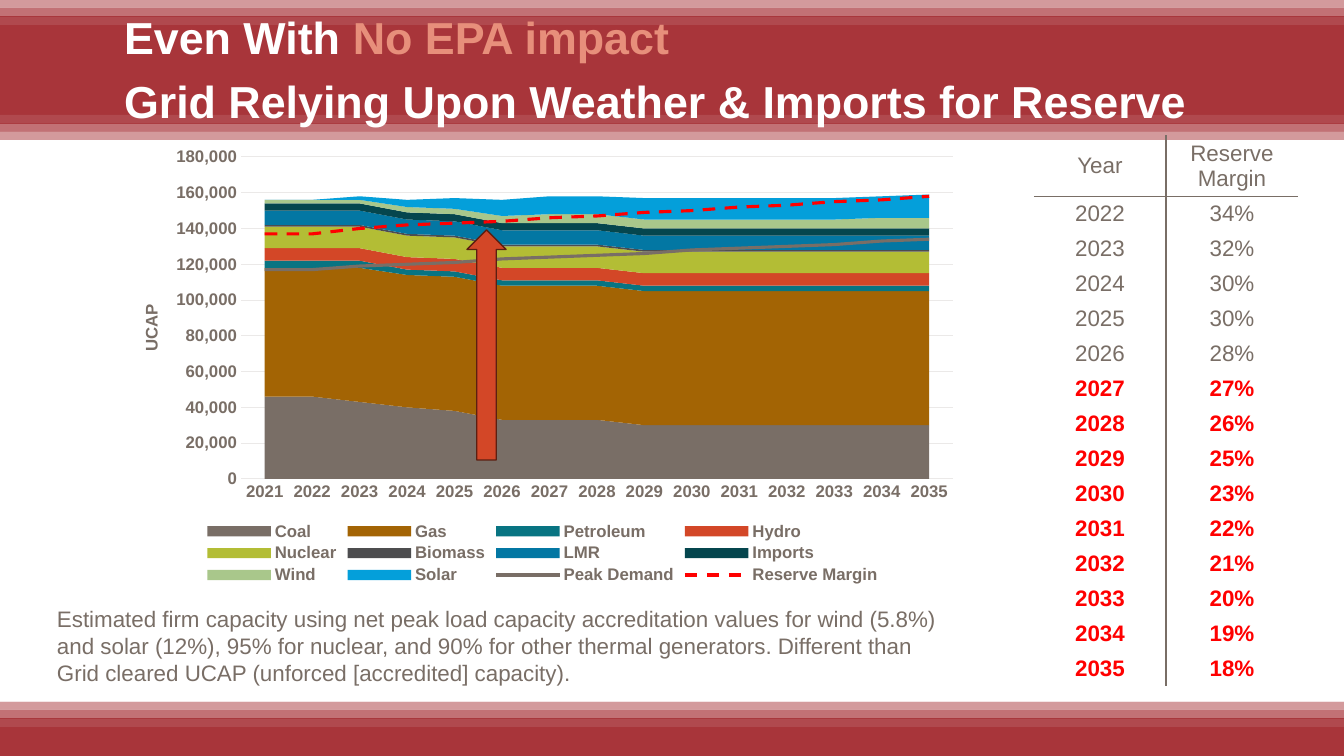
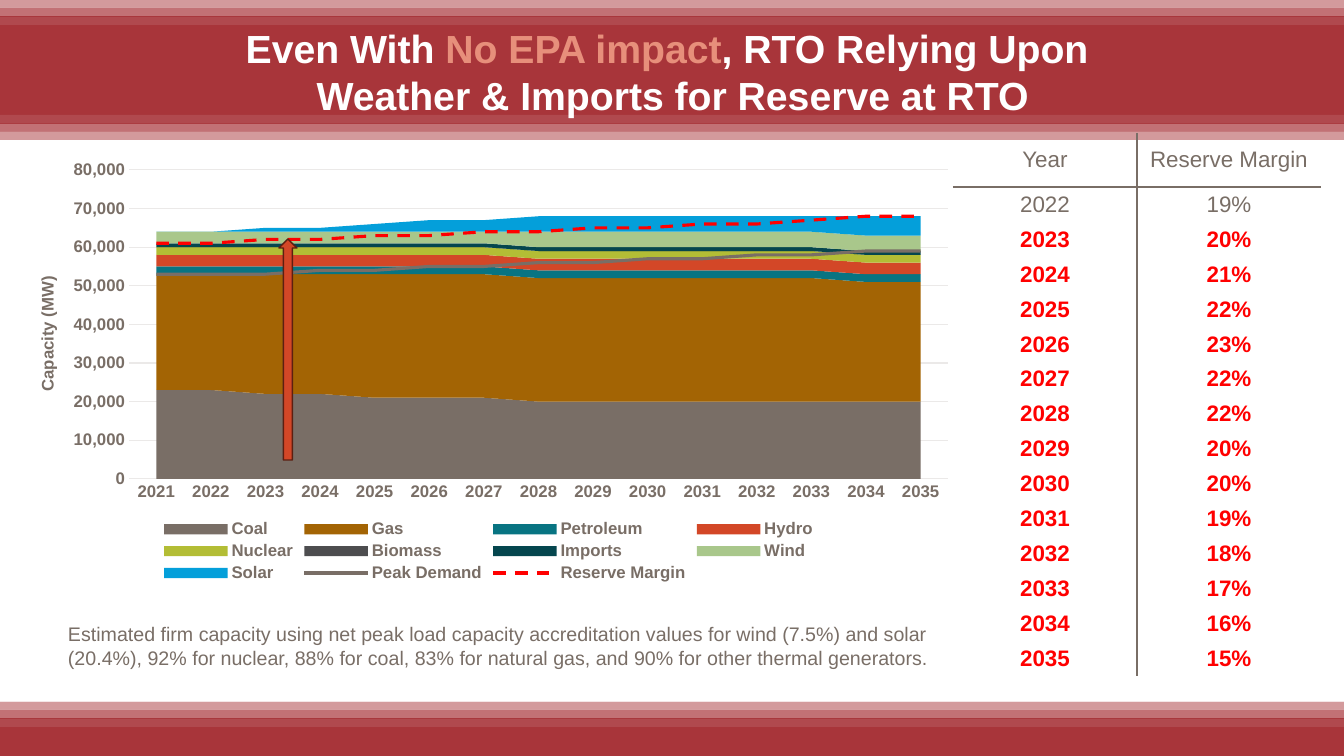
"""Build two slides on grid capacity outlook and reserve margins."""
import copy
import dataclasses
import typing

import pptx
import pptx.chart.chart
import pptx.chart.data
import pptx.dml.color
import pptx.enum.chart
import pptx.enum.dml
import pptx.enum.shapes
import pptx.enum.text
import pptx.oxml.ns
import pptx.oxml.xmlchemy
import pptx.slide
import pptx.table
import pptx.text.text
import pptx.util

EMU_PER_PX = 914400 / 100.8
SLIDE_W, SLIDE_H = 1344, 756
TITLE_X, TITLE_W, NOTE_W, ROW_H = 124, 1097, 889, 35
YEARS = range(2021, 2036)
ALIGN = pptx.enum.text.PP_ALIGN
qn = pptx.oxml.ns.qn
new_element = pptx.oxml.xmlchemy.OxmlElement


@dataclasses.dataclass(frozen=True)
class Theme:
    font: str = "Arial"
    band: str = "A8353A"
    white: str = "FFFFFF"
    accent: str = "E78F7B"
    body: str = "796E66"
    alert: str = "FF0000"
    grid: str = "EBE9E8"
    arrow: str = "D34727"
    arrow_edge: str = "5C1F11"
    chart_size: int = 12
    table_size: int = 16


THEME = Theme()
SERIES_COLORS = {
    "Coal": THEME.body, "Gas": "A36404", "Petroleum": "087482", "Hydro": THEME.arrow,
    "Nuclear": "B3BD35", "Biomass": "4D4D4F", "LMR": "0377A3", "Imports": "05464E",
    "Wind": "A9C78B", "Solar": "049FDA", "Peak Demand": THEME.body, "Reserve Margin": THEME.alert,
}


class Box(typing.NamedTuple):
    x: int
    y: int
    w: int = 0
    h: int = 0


class Run(typing.NamedTuple):
    text: str
    color: str = THEME.white


@dataclasses.dataclass(frozen=True)
class Title:
    y: int
    lines: list[list[Run]]
    size: int
    align: ALIGN
    spacing: float


@dataclasses.dataclass(frozen=True)
class CapacityChart:
    box: Box
    plot: Box
    axis_title: str
    axis_title_at: Box
    top: int
    step: int
    thousands: dict[str, list[int]]


@dataclasses.dataclass(frozen=True)
class MarginTable:
    x: int
    y: int
    column_w: int
    header_h: int
    margins: list[int]
    alert_from: int


@dataclasses.dataclass(frozen=True)
class Outlook:
    title: Title
    chart: CapacityChart
    table: MarginTable
    note_box: Box
    note: str
    note_size: int
    arrow: Box


def hold(*values: int) -> list[int]:
    """Extend yearly values with the last one up to the final year."""
    return [*values, *[values[-1]] * (len(YEARS) - len(values))]


def trend(base: int, start: float, growth: float) -> list[int]:
    """Return two flat years followed by steady growth."""
    return [base, base, *(round(start + growth * year) for year in range(len(YEARS) - 2))]


def px(length: float) -> int:
    """Convert px to EMU."""
    return round(length * EMU_PER_PX)


def emu(box: Box) -> list[int]:
    """Convert a box to EMU."""
    return [px(length) for length in box]


def rgb(color: str) -> pptx.dml.color.RGBColor:
    """Return a colour from its hex text."""
    return pptx.dml.color.RGBColor.from_string(color)


def style_font(font: pptx.text.text.Font, size: int, color: str, bold: bool = False) -> None:
    """Apply the theme typeface with a size, colour and weight."""
    font.name, font.size, font.bold = THEME.font, pptx.util.Pt(size), bold
    font.color.rgb = rgb(color)


def add_solid(slide: pptx.slide.Slide, preset: pptx.enum.shapes.MSO_SHAPE, box: Box, color: str):
    """Draw a filled preset shape without outline or shadow."""
    solid = slide.shapes.add_shape(preset, *emu(box))
    solid.shadow.inherit = False
    solid.fill.solid()
    solid.fill.fore_color.rgb = rgb(color)
    solid.line.fill.background()
    return solid


def add_bands(slide: pptx.slide.Slide, layout: pptx.slide.SlideLayout) -> None:
    """Draw the header and footer bands and place them on the shared layout."""
    rect = pptx.enum.shapes.MSO_SHAPE.RECTANGLE
    header, footer = Box(0, 0, SLIDE_W, 140), Box(0, 702, SLIDE_W, 54)
    bands = [add_solid(slide, rect, box, THEME.band) for box in (header, footer)]
    for start, direction in ((0, 1), (132, -1), (footer.y, 1)):
        for step, opacity in enumerate((50, 30, 10)):
            y = start + direction * round(8.4 * step)
            stripe = add_solid(slide, rect, Box(0, y, SLIDE_W, 8), THEME.white)
            color = stripe.element.spPr.find(qn("a:solidFill"))[0]
            alpha = new_element("a:alpha")
            alpha.set("val", str(opacity * 1000))
            color.append(alpha)
            bands.append(stripe)
    for band in bands:
        layout.shapes.element.append(band.element)


def add_text(slide: pptx.slide.Slide, box: Box, lines: list[list[Run]], size: int,
             bold: bool = False, align: ALIGN = ALIGN.LEFT, spacing: float = 1.0) -> None:
    """Write lines of runs in a wrapped box without insets."""
    frame = slide.shapes.add_textbox(*emu(box)).text_frame
    frame.word_wrap = True
    frame.margin_left = frame.margin_right = frame.margin_top = frame.margin_bottom = 0
    for index, line in enumerate(lines):
        paragraph = frame.add_paragraph() if index else frame.paragraphs[0]
        paragraph.alignment, paragraph.line_spacing = align, spacing
        paragraph.space_after = pptx.util.Pt(7)
        for part in line:
            run = paragraph.add_run()
            run.text = part.text
            style_font(run.font, size, part.color, bold)


def set_layout(owner, index: int, chart_box: Box, box: Box) -> None:
    """Fix the place, and the size if given, of a chart part in slide px."""
    old = owner.find(qn("c:layout"))
    if old is not None:
        owner.remove(old)
    layout, manual = new_element("c:layout"), new_element("c:manualLayout")
    layout.append(manual)
    settings = {"layoutTarget": "inner"} if box.w else {}
    settings |= {"xMode": "edge", "yMode": "edge",
                 "x": (box.x - chart_box.x) / chart_box.w, "y": (box.y - chart_box.y) / chart_box.h}
    if box.w:
        settings |= {"w": box.w / chart_box.w, "h": box.h / chart_box.h}
    for tag, value in settings.items():
        setting = new_element(f"c:{tag}")
        setting.set("val", str(value))
        manual.append(setting)
    owner.insert(index, layout)


def split_lines(chart: pptx.chart.chart.Chart, count: int) -> None:
    """Move the last series from the area plot to a line plot on the same axes."""
    chart.plots[0].vary_by_categories = False
    areas = chart.element.find(".//" + qn("c:areaChart"))
    lines, grouping = new_element("c:lineChart"), new_element("c:grouping")
    grouping.set("val", "standard")
    lines.append(grouping)
    for series in areas.findall(qn("c:ser"))[-count:]:
        lines.append(series)
    for axis_id in areas.findall(qn("c:axId")):
        lines.append(copy.deepcopy(axis_id))
    areas.addnext(lines)
    chart.plots[1].vary_by_categories = False


def add_capacity_chart(slide: pptx.slide.Slide, content: CapacityChart) -> None:
    """Draw stacked capacity with demand and reserve lines."""
    data = pptx.chart.data.CategoryChartData(number_format="#,##0")
    data.categories = [str(year) for year in YEARS]
    for name, values in content.thousands.items():
        data.add_series(name, [value * 1000 for value in values])
    kind = pptx.enum.chart.XL_CHART_TYPE.AREA_STACKED
    chart = slide.shapes.add_chart(kind, *emu(content.box), data).chart
    chart.has_title = False
    chart.has_legend = True
    chart.legend.position = pptx.enum.chart.XL_LEGEND_POSITION.BOTTOM
    chart.legend.include_in_layout = False
    split_lines(chart, 2)
    for series in chart.plots[0].series:
        series.format.fill.solid()
        series.format.fill.fore_color.rgb = rgb(SERIES_COLORS[series.name])
        series.format.line.fill.background()
    for series in chart.plots[1].series:
        series.smooth = False
        series.marker.style = pptx.enum.chart.XL_MARKER_STYLE.NONE
        series.format.line.width = pptx.util.Pt(2.25)
        series.format.line.color.rgb = rgb(SERIES_COLORS[series.name])
        if series.name == "Reserve Margin":
            series.format.line.dash_style = pptx.enum.dml.MSO_LINE.DASH

    years, capacity = chart.category_axis, chart.value_axis
    for axis in (years, capacity):
        axis.major_tick_mark = axis.minor_tick_mark = pptx.enum.chart.XL_TICK_MARK.NONE
    years.has_major_gridlines = False
    capacity.minimum_scale, capacity.maximum_scale = 0, content.top
    capacity.major_unit = content.step
    capacity.has_major_gridlines = True
    capacity.tick_labels.number_format = "#,##0"
    capacity.tick_labels.number_format_is_linked = False
    capacity.format.line.fill.background()
    for line in (years.format.line, capacity.major_gridlines.format.line):
        line.width = pptx.util.Pt(0.75)
        line.color.rgb = rgb(THEME.grid)
    heading = capacity.axis_title
    run = heading.text_frame.paragraphs[0].add_run()
    run.text = content.axis_title
    for font in (chart.font, chart.legend.font, years.tick_labels.font,
                 capacity.tick_labels.font, run.font):
        style_font(font, THEME.chart_size, THEME.body, True)
    heading.element.find(".//" + qn("a:bodyPr")).set("rot", "-5400000")
    set_layout(heading.element, 1, content.box, content.axis_title_at)
    set_layout(chart.element.find(".//" + qn("c:plotArea")), 0, content.box, content.plot)
    for crossing in chart.element.iter(qn("c:crossBetween")):
        crossing.set("val", "between")


def add_borders(cell: pptx.table._Cell, sides: str) -> None:
    """Rule the given sides of a cell."""
    properties = cell._tc.get_or_add_tcPr()
    for index, side in enumerate(sides):
        rule, fill, color = (new_element(tag) for tag in (f"a:ln{side}", "a:solidFill", "a:srgbClr"))
        rule.set("w", str(pptx.util.Pt(1)))
        color.set("val", THEME.body)
        fill.append(color)
        rule.append(fill)
        properties.insert(index, rule)


def add_margin_table(slide: pptx.slide.Slide, content: MarginTable) -> None:
    """Draw reserve margin by year, with alert years in bold red."""
    rows = [("Year", "Reserve Margin")]
    rows += [(str(year), f"{margin}%") for year, margin in zip(YEARS[1:], content.margins)]
    height = content.header_h + ROW_H * len(content.margins)
    box = Box(content.x, content.y, content.column_w * 2, height)
    frame = slide.shapes.add_table(len(rows), 2, *emu(box))
    table = frame.table
    table.first_row = table.horz_banding = False
    for style in frame.element.iter(qn("a:tableStyleId")):
        style.text = "{2D5ABB26-0587-4C30-8999-92F81FD0307C}"
    for row_index, texts in enumerate(rows):
        table.rows[row_index].height = px(ROW_H if row_index else content.header_h)
        alert = row_index > 0 and YEARS[row_index] >= content.alert_from
        for column_index, text in enumerate(texts):
            cell = table.cell(row_index, column_index)
            cell.fill.background()
            cell.margin_top = cell.margin_bottom = px(4)
            cell.vertical_anchor = pptx.enum.text.MSO_ANCHOR.MIDDLE
            paragraph = cell.text_frame.paragraphs[0]
            paragraph.alignment = ALIGN.CENTER
            run = paragraph.add_run()
            run.text = text
            style_font(run.font, THEME.table_size, THEME.alert if alert else THEME.body, alert)
            add_borders(cell, ("L" if column_index else "R") + ("" if row_index else "B"))


def add_outlook(slide: pptx.slide.Slide, outlook: Outlook) -> None:
    """Draw one capacity outlook slide."""
    title = outlook.title
    title_box = Box(TITLE_X, title.y, TITLE_W, 100)
    add_text(slide, title_box, title.lines, title.size, True, title.align, title.spacing)
    add_capacity_chart(slide, outlook.chart)
    add_margin_table(slide, outlook.table)
    add_text(slide, outlook.note_box, [[Run(outlook.note, THEME.body)]], outlook.note_size)
    arrow = add_solid(slide, pptx.enum.shapes.MSO_SHAPE.UP_ARROW, outlook.arrow, THEME.arrow)
    arrow.line.color.rgb = rgb(THEME.arrow_edge)
    arrow.line.width = pptx.util.Pt(1)


OUTLOOKS = [
    Outlook(
        Title(10, [[Run("Even With "), Run("No EPA impact", THEME.accent)],
                   [Run("Grid Relying Upon Weather & Imports for Reserve")]], 32, ALIGN.LEFT, 1.0),
        CapacityChart(
            Box(114, 140, 857, 448), Box(241, 157, 712, 322), "UCAP", Box(138, 301), 180000, 20000,
            {"Coal": hold(46, 46, 43, 40, 38, 33, 33, 33, 30), "Gas": hold(72, 72, 75, 74, 75),
             "Petroleum": hold(4, 4, 4, 3), "Hydro": hold(7), "Nuclear": hold(12),
             "Biomass": hold(1), "LMR": hold(8), "Imports": hold(4),
             "Wind": hold(2, 2, 2, 3, 3, 4, *[5] * 7, 6),
             "Solar": hold(0, 0, 2, 4, 6, 9, 10, 10, *[12] * 6, 13),
             "Peak Demand": trend(117, 118.75, 1.26), "Reserve Margin": trend(137, 140.02, 1.49)}),
        MarginTable(1034, 135, 132, 60, [34, 32, 30, 30, *range(28, 24, -1), *range(23, 17, -1)], 2027),
        Box(57, 605, NOTE_W, 82),
        "Estimated firm capacity using net peak load capacity accreditation values for wind (5.8%) "
        "and solar (12%), 95% for nuclear, and 90% for other thermal generators. Different than "
        "Grid cleared UCAP (unforced [accredited] capacity).", 16, Box(467, 230, 39, 230)),
    Outlook(
        Title(33, [[Run("Even With "), Run("No EPA impact", THEME.accent), Run(", RTO Relying Upon ")],
                   [Run("Weather & Imports for Reserve at RTO")]], 28, ALIGN.CENTER, 0.8),
        CapacityChart(
            Box(9, 153, 959, 433), Box(129, 170, 819, 309), "Capacity (MW)", Box(34, 273), 80000, 10000,
            {"Coal": hold(23, 23, 22, 22, 21, 21, 21, 20), "Gas": hold(30, 30, 31, 31, *[32] * 9, 31),
             "Petroleum": hold(2), "Hydro": hold(3), "Nuclear": hold(2),
             "Biomass": hold(0), "Imports": hold(1), "Wind": hold(*[3] * 7, 4),
             "Solar": hold(0, 0, 1, 1, 2, 3, 3, *[4] * 6, 5),
             "Peak Demand": trend(53, 53.1, 0.5), "Reserve Margin": trend(61, 61.6, 0.54)}),
        MarginTable(953, 133, 184, 54, [*range(19, 24), 22, 22, 20, *range(20, 14, -1)], 2023),
        Box(68, 622, NOTE_W, 48),
        "Estimated firm capacity using net peak load capacity accreditation values for wind (7.5%) "
        "and solar (20.4%), 92% for nuclear, 88% for coal, 83% for natural gas, and 90% for other "
        "thermal generators.", 14, Box(279, 239, 18, 221)),
]


def main() -> None:
    """Build and save the presentation."""
    presentation = pptx.Presentation()
    presentation.slide_width, presentation.slide_height = px(SLIDE_W), px(SLIDE_H)
    blank = presentation.slide_layouts[6]
    slides = [presentation.slides.add_slide(blank) for _ in OUTLOOKS]
    add_bands(slides[0], blank)
    for slide, outlook in zip(slides, OUTLOOKS):
        add_outlook(slide, outlook)
    presentation.save("out.pptx")


if __name__ == "__main__":
    main()
